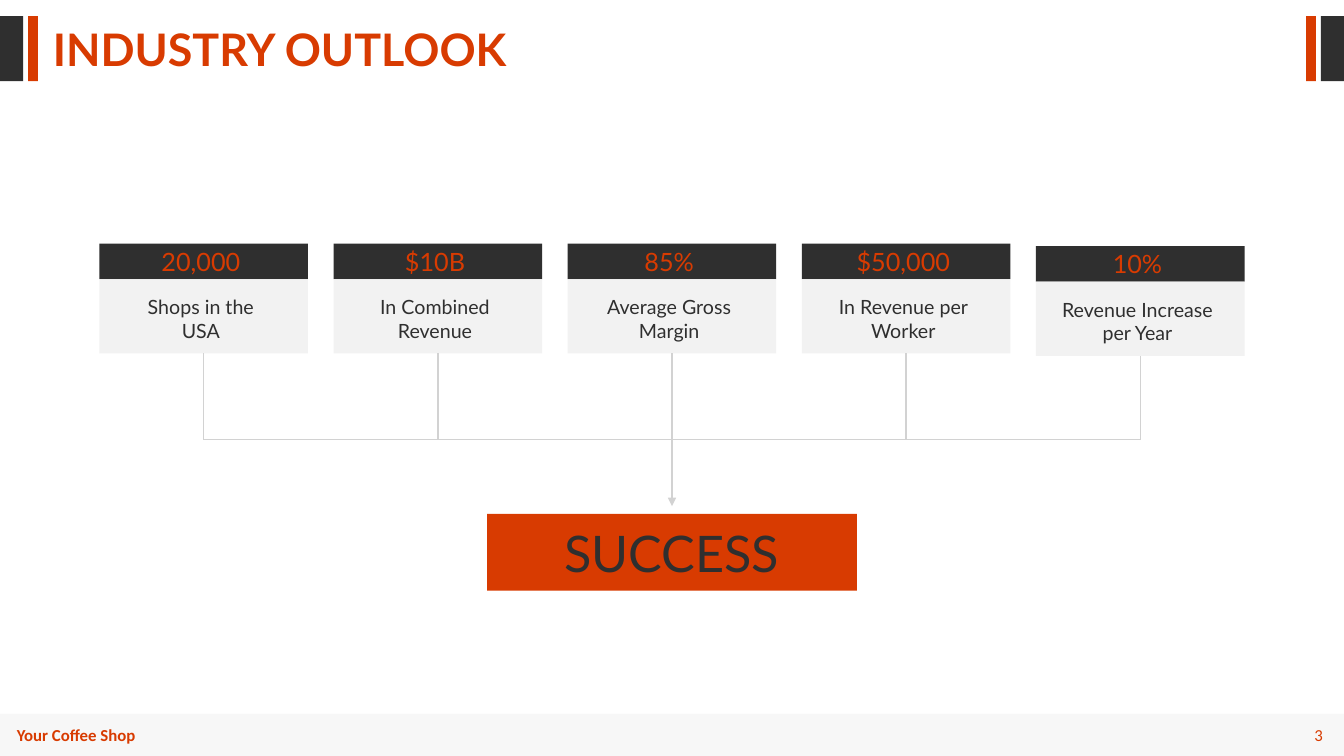
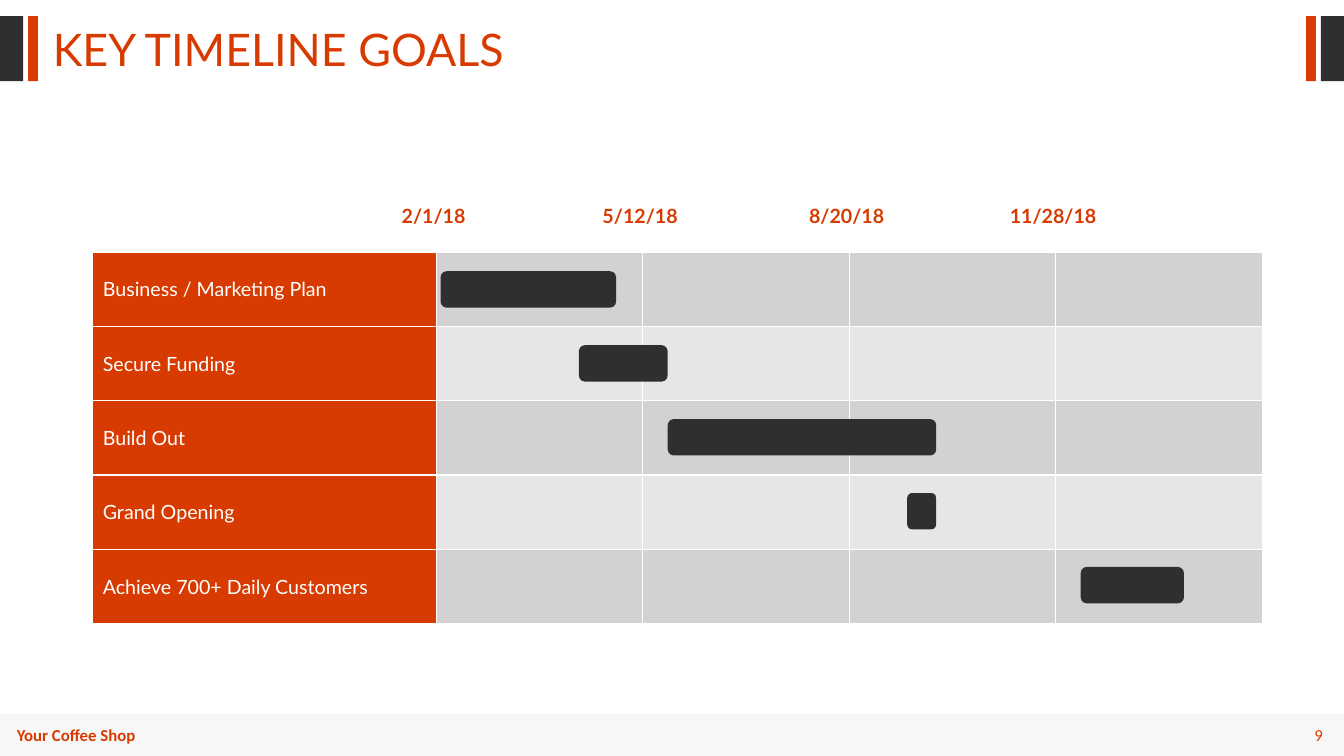
from lxml.etree import SubElement
from pptx import Presentation
from pptx.dml.color import RGBColor
from pptx.enum.shapes import MSO_CONNECTOR, MSO_SHAPE
from pptx.enum.text import MSO_ANCHOR, PP_ALIGN
from pptx.oxml.ns import qn
from pptx.util import Pt

COLORS = {
    "accent": "D83B01",
    "dark": "2F2F2F",
    "card": "F2F2F2",
    "line": "D2D2D2",
    "pale": "E6E6E6",
    "white": "FFFFFF",
}
PAGE_WIDTH, PAGE_HEIGHT = 960, 540


def write(frame, text, size=14, color="dark", font="Lato", bold=False,
          align=PP_ALIGN.CENTER, anchor=MSO_ANCHOR.MIDDLE, spacing=None,
          margins=(7.2, 3.6, 7.2, 3.6)):
    frame.word_wrap = True
    frame.vertical_anchor = anchor
    (frame.margin_left, frame.margin_top,
     frame.margin_right, frame.margin_bottom) = [Pt(margin) for margin in margins]
    para = frame.paragraphs[0]
    para.alignment = align
    if spacing:
        para.line_spacing = spacing
    span = para.add_run()
    span.text = text
    span.font.name = font
    span.font.size = Pt(size)
    span.font.bold = bold
    span.font.color.rgb = RGBColor.from_string(COLORS[color])


def add_block(page, left, top, width, height, color, kind=MSO_SHAPE.RECTANGLE):
    block = page.shapes.add_shape(kind, Pt(left), Pt(top), Pt(width), Pt(height))
    block.shadow.inherit = False
    block.fill.solid()
    block.fill.fore_color.rgb = RGBColor.from_string(COLORS[color])
    block.line.fill.background()
    return block


deck = Presentation()
deck.slide_width, deck.slide_height = Pt(PAGE_WIDTH), Pt(PAGE_HEIGHT)
title_only = deck.slide_layouts[5]

pages = []
for title, bold, number in [("INDUSTRY OUTLOOK", True, "3"),
                            ("KEY TIMELINE GOALS", False, "9")]:
    page = deck.slides.add_slide(title_only)
    pages.append(page)

    heading = page.shapes.title
    heading.left, heading.top = Pt(30.5), Pt(19.5)
    heading.width, heading.height = Pt(480), Pt(39)
    write(heading.text_frame, title, size=32, color="accent", bold=bold,
          align=PP_ALIGN.LEFT, anchor=MSO_ANCHOR.TOP, spacing=0.8)

    for inset, width, color in [(0, 16.5, "dark"), (20, 7, "accent")]:
        for left in (inset, PAGE_WIDTH - inset - width):
            add_block(page, left, 11.5, width, 46.5, color)

    band = add_block(page, 0, 510, PAGE_WIDTH, 30, "pale")
    band_color = band._element.find(".//" + qn("a:srgbClr"))
    SubElement(band_color, qn("a:alpha"), val="30000")

    for text, left, width, strong, align in [
        ("Your Coffee Shop", 5, 133, True, PP_ALIGN.LEFT),
        (number, 889, 63, False, PP_ALIGN.RIGHT),
    ]:
        box = page.shapes.add_textbox(Pt(left), Pt(514), Pt(width), Pt(22))
        write(box.text_frame, text, size=12, color="accent", font="Calibri",
              bold=strong, align=align)

outlook, timeline = pages

CARD_WIDTH, CARD_PITCH = 149, 167.25
HEADER_HEIGHT, BODY_HEIGHT = 25.5, 53
BUS_TOP = 314
cards = [
    ("20,000", "Shops in the USA", 93, 174),
    ("$10B", "In Combined Revenue", 93, 174),
    ("85%", "Average Gross Margin", 93, 174),
    ("$50,000", "In Revenue per Worker", 93, 174),
    ("10%", "Revenue Increase per Year", 116, 175.75),
]
centers = [145.5 + CARD_PITCH * index for index in range(len(cards))]
links = []
for center, (figure, caption, text_width, top) in zip(centers, cards):
    left = center - CARD_WIDTH / 2
    header = add_block(outlook, left, top, CARD_WIDTH, HEADER_HEIGHT, "dark")
    write(header.text_frame, figure, size=18, color="accent", margins=(0, 0, 4, 0))
    body_top = top + HEADER_HEIGHT
    body = add_block(outlook, left, body_top, CARD_WIDTH, BODY_HEIGHT, "card")
    side = (CARD_WIDTH - text_width) / 2
    write(body.text_frame, caption, margins=(side - 2, 3, side + 2, 0))
    links.append((center, body_top + BODY_HEIGHT, center, BUS_TOP))

success = add_block(outlook, 348, 367, 264, 55, "accent")
write(success.text_frame, "SUCCESS", size=36)

links.append((centers[0], BUS_TOP, centers[-1], BUS_TOP))
links.append((centers[2], BUS_TOP, centers[2], 361.5))
for ends in links:
    link = outlook.shapes.add_connector(MSO_CONNECTOR.STRAIGHT, *[Pt(end) for end in ends])
    link.line.width = Pt(1)
    link.line.color.rgb = RGBColor.from_string(COLORS["line"])
    SubElement(link._element.spPr, qn("a:effectLst"))
SubElement(link.line._get_or_add_ln(), qn("a:tailEnd"), type="triangle")

TABLE_LEFT, TABLE_TOP = 66.25, 180
LABEL_WIDTH, PERIOD_WIDTH, ROW_HEIGHT = 245.5, 147.5, 53.1
PERIOD_DAYS = 100
BAR_TOP, BAR_PITCH, BAR_HEIGHT = 193.75, 52.8, 26
CHART_LEFT = TABLE_LEFT + LABEL_WIDTH
DAY_WIDTH = PERIOD_WIDTH / PERIOD_DAYS
dates = ["2/1/18", "5/12/18", "8/20/18", "11/28/18"]
goals = [
    ("Business / Marketing Plan", 2, 85),
    ("Secure Funding", 69, 43),
    ("Build Out", 112, 130),
    ("Grand Opening", 228, 14),
    ("Achieve 700+ Daily Customers", 312, 50),
]
widths = [LABEL_WIDTH] + [PERIOD_WIDTH] * len(dates)
grid = timeline.shapes.add_table(
    len(goals), len(widths), Pt(TABLE_LEFT), Pt(TABLE_TOP),
    Pt(sum(widths)), Pt(ROW_HEIGHT * len(goals))).table
grid.first_row = grid.horz_banding = False
for column, width in zip(grid.columns, widths):
    column.width = Pt(width)

for row, (goal, start, days) in enumerate(goals):
    grid.rows[row].height = Pt(ROW_HEIGHT)
    for column in range(len(widths)):
        cell = grid.cell(row, column)
        properties = cell._tc.get_or_add_tcPr()
        for edge in ("a:lnL", "a:lnR", "a:lnT", "a:lnB"):
            border = SubElement(properties, qn(edge), w=str(Pt(1)))
            paint = SubElement(border, qn("a:solidFill"))
            SubElement(paint, qn("a:srgbClr"), val=COLORS["white"])
        cell.fill.solid()
        shade = "accent" if column == 0 else ("line", "pale")[row % 2]
        cell.fill.fore_color.rgb = RGBColor.from_string(COLORS[shade])
    label = grid.cell(row, 0)
    label.vertical_anchor = MSO_ANCHOR.MIDDLE
    write(label.text_frame, goal, color="white", align=PP_ALIGN.LEFT)
    add_block(timeline, CHART_LEFT + start * DAY_WIDTH, BAR_TOP + row * BAR_PITCH,
              days * DAY_WIDTH, BAR_HEIGHT, "dark", MSO_SHAPE.ROUNDED_RECTANGLE)

DATE_WIDTH = 90
for index, date in enumerate(dates):
    center = CHART_LEFT + index * PERIOD_WIDTH - 2
    box = timeline.shapes.add_textbox(
        Pt(center - DATE_WIDTH / 2), Pt(141.5), Pt(DATE_WIDTH), Pt(24.5))
    write(box.text_frame, date, color="accent", bold=True)

deck.save("out.pptx")
